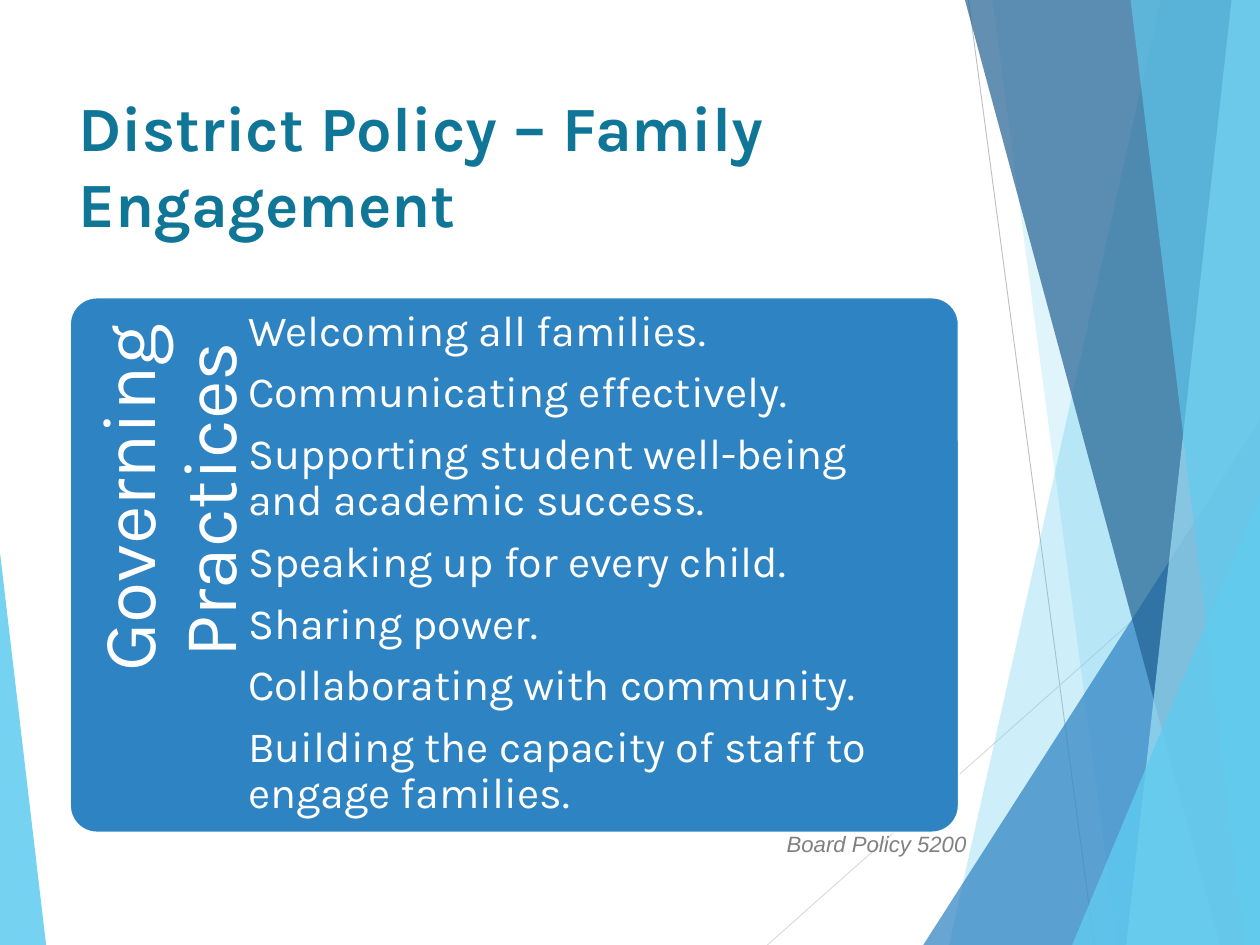
from dataclasses import dataclass

from lxml.etree import SubElement
from pptx import Presentation
from pptx.dml.color import RGBColor
from pptx.enum.shapes import MSO_CONNECTOR, MSO_SHAPE
from pptx.enum.text import MSO_ANCHOR, PP_ALIGN
from pptx.oxml.ns import qn
from pptx.util import Inches, Pt

WIDTH, HEIGHT = 14.22, 10.67
WHITE = RGBColor(0xFF, 0xFF, 0xFF)
SKY = RGBColor(0x5F, 0xCB, 0xEF)
PALE_SKY = RGBColor(0x9F, 0xE0, 0xF5)
BLUE = RGBColor(0x2E, 0x83, 0xC3)
NAVY = RGBColor(0x22, 0x62, 0x92)
TEAL = RGBColor(0x0F, 0x76, 0x98)
GREY = RGBColor(0x80, 0x80, 0x80)
MID_GREY = RGBColor(0xBF, 0xBF, 0xBF)
LIGHT_GREY = RGBColor(0xD9, 0xD9, 0xD9)


@dataclass(frozen=True)
class Hairline:
    start: tuple[float, float]
    end: tuple[float, float]
    color: RGBColor


@dataclass(frozen=True)
class Band:
    """A full-height shape whose slanted left edge runs from top_x to bottom_x."""
    top_x: float
    bottom_x: float
    color: RGBColor
    opacity: int


@dataclass(frozen=True)
class Wedge:
    """A right triangle standing on the bottom edge; apex is 0 (left) or 1 (right)."""
    left: float
    top: float
    width: float
    apex: int
    color: RGBColor
    opacity: int


@dataclass(frozen=True)
class TextStyle:
    size: float
    color: RGBColor
    font: str = "Karla"
    bold: bool = False
    italic: bool = False
    align: PP_ALIGN = PP_ALIGN.LEFT
    line_spacing: float = 1.0
    space_after: float = 0


HAIRLINES = [
    Hairline((10.93, 0), (12.35, HEIGHT), MID_GREY),
    Hairline((WIDTH, 5.73), (8.66, HEIGHT), LIGHT_GREY),
]
FACETS = [
    Band(13.1, 10.71, SKY, 30),
    Band(11.2, 12.61, SKY, 20),
    Wedge(10.42, 4.74, 3.8, 1, BLUE, 72),
    Band(10.89, 13.77, NAVY, 70),
    Band(13.9, 12.71, PALE_SKY, 70),
    Band(12.76, 14.05, SKY, 65),
    Wedge(12.1, 5.58, 2.12, 1, SKY, 80),
    Wedge(0, 6.24, 0.52, 0, SKY, 85),
]
PRACTICES = [
    "Welcoming all families.",
    "Communicating effectively.",
    "Supporting student well-being and academic success.",
    "Speaking up for every child.",
    "Sharing power.",
    "Collaborating with community.",
    "Building the capacity of staff to engage families.",
]
TITLE = TextStyle(51.2, TEAL, bold=True)
SOURCE = TextStyle(18, GREY, font="Arial", italic=True, space_after=6)
HEADING = TextStyle(61, WHITE, align=PP_ALIGN.RIGHT, line_spacing=0.9)
PRACTICE = TextStyle(35, WHITE, line_spacing=0.9, space_after=12.25)


def add_hairline(page, hairline: Hairline) -> None:
    points = [Inches(v) for v in (*hairline.start, *hairline.end)]
    line = page.shapes.add_connector(MSO_CONNECTOR.STRAIGHT, *points)
    line.line.color.rgb = hairline.color
    line.line.width = Pt(0.75)
    SubElement(line.element.spPr, qn("a:effectLst"))


def add_facet(page, facet: Band | Wedge) -> None:
    if isinstance(facet, Band):
        builder = page.shapes.build_freeform(Inches(facet.top_x), 0)
        corners = [(WIDTH, 0), (WIDTH, HEIGHT), (facet.bottom_x, HEIGHT)]
        builder.add_line_segments([(Inches(x), Inches(y)) for x, y in corners])
        shape = builder.convert_to_shape()
    else:
        shape = page.shapes.add_shape(
            MSO_SHAPE.ISOSCELES_TRIANGLE, Inches(facet.left), Inches(facet.top),
            Inches(facet.width), Inches(HEIGHT - facet.top))
        shape.adjustments[0] = facet.apex
    shape.shadow.inherit = False
    shape.line.fill.background()
    shape.fill.solid()
    shape.fill.fore_color.rgb = facet.color
    color = shape.element.spPr.find(".//" + qn("a:srgbClr"))
    SubElement(color, qn("a:alpha")).set("val", str(facet.opacity * 1000))


def add_panel(page) -> None:
    panel = page.shapes.add_shape(
        MSO_SHAPE.ROUNDED_RECTANGLE, Inches(0.79), Inches(3.36), Inches(10.03), Inches(6.04))
    panel.adjustments[0] = 0.05
    panel.shadow.inherit = False
    panel.fill.solid()
    panel.fill.fore_color.rgb = BLUE
    panel.line.color.rgb = WHITE
    panel.line.width = Pt(1.5)


def add_text(page, at: tuple[float, float, float, float], lines: list[str], style: TextStyle,
             insets: tuple[float, float, float, float] = (0.1, 0.05, 0.1, 0.05),
             rotation: float = 0) -> None:
    """Place one paragraph per line; insets are left, top, right, bottom."""
    box = page.shapes.add_textbox(*[Inches(v) for v in at])
    box.rotation = rotation
    frame = box.text_frame
    frame.word_wrap = True
    frame.vertical_anchor = MSO_ANCHOR.TOP
    (frame.margin_left, frame.margin_top,
     frame.margin_right, frame.margin_bottom) = [Inches(v) for v in insets]
    for index, line in enumerate(lines):
        para = frame.add_paragraph() if index else frame.paragraphs[0]
        para.alignment = style.align
        para.line_spacing = style.line_spacing
        para.space_after = Pt(style.space_after)
        span = para.add_run()
        span.text = line
        span.font.name = style.font
        span.font.size = Pt(style.size)
        span.font.bold = style.bold
        span.font.italic = style.italic
        span.font.color.rgb = style.color


def main() -> None:
    deck = Presentation()
    deck.slide_width, deck.slide_height = Inches(WIDTH), Inches(HEIGHT)
    page = deck.slides.add_slide(deck.slide_layouts[6])
    page.background.fill.solid()
    page.background.fill.fore_color.rgb = WHITE

    for hairline in HAIRLINES:
        add_hairline(page, hairline)
    for facet in FACETS:
        add_facet(page, facet)
    add_text(page, (0.79, 0.95, 10.03, 2.05), ["District Policy – Family Engagement"], TITLE)
    add_text(page, (8.78, 9.33, 3.67, 0.4), ["Board Policy 5200"], SOURCE)
    add_panel(page)
    add_text(page, (-0.68, 4.83, 4.95, 2.01), ["Governing Practices "], HEADING,
             insets=(0, 0.23, 0.3, 0), rotation=270)
    add_text(page, (2.8, 3.36, 7.47, 6.04), PRACTICES, PRACTICE, insets=(0, 0.13, 0, 0))
    deck.save("out.pptx")


if __name__ == "__main__":
    main()
